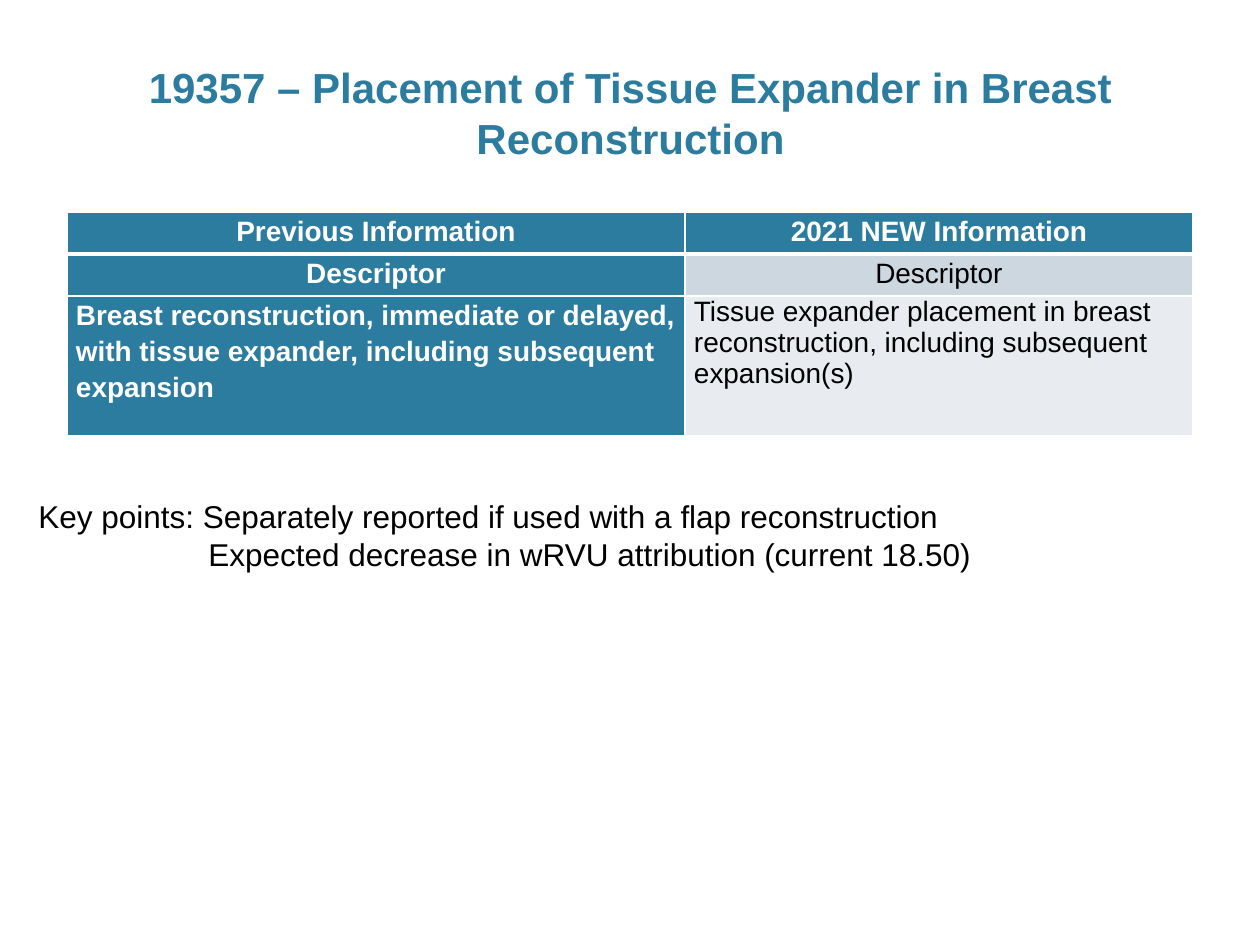
from lxml import etree
from pptx import Presentation
from pptx.dml.color import RGBColor
from pptx.enum.text import MSO_ANCHOR, PP_ALIGN
from pptx.oxml.ns import qn
from pptx.util import Pt

PX = 914400 / 126  # EMU in one px
TEAL = RGBColor(0x2C, 0x7C, 0x9F)
MIST = RGBColor(0xCD, 0xD7, 0xDF)
PALE = RGBColor(0xE8, 0xEC, 0xF0)
WHITE = RGBColor(0xFF, 0xFF, 0xFF)
BLACK = RGBColor(0x00, 0x00, 0x00)
LEFT, CENTER = PP_ALIGN.LEFT, PP_ALIGN.CENTER
TOP, BOTTOM = MSO_ANCHOR.TOP, MSO_ANCHOR.BOTTOM


def px(n):
    return round(n * PX)


class Deck:
    font = "Arial"

    def __init__(self, width, height):
        self.prs = Presentation()
        self.prs.slide_width, self.prs.slide_height = px(width), px(height)
        self.s = self.prs.slides.add_slide(self.prs.slide_layouts[6])

    def add_line(self, p, text, size, color, bold=False, **layout):
        for name, value in layout.items():
            setattr(p, name, value)
        r = p.add_run()
        r.text = text
        style = {"name": self.font, "size": Pt(size), "bold": bold}
        for name, value in style.items():
            setattr(r.font, name, value)
        r.font.color.rgb = color

    def text(self, box, lines, size, color, bold=False, align=LEFT, anchor=TOP):
        """Each line is a pair of its text and its left indent."""
        tf = self.s.shapes.add_textbox(*map(px, box)).text_frame
        tf.word_wrap = True
        tf.vertical_anchor = anchor
        for i, (line, indent) in enumerate(lines):
            p = tf.add_paragraph() if i else tf.paragraphs[0]
            if indent:
                p._p.get_or_add_pPr().set("marL", str(px(indent)))
            self.add_line(p, line, size, color, bold, alignment=align)

    def borders(self, cell, **widths):
        tcPr = cell._tc.get_or_add_tcPr()
        for side in "LRTB":
            width = Pt(widths.get(side, 1))
            ln = etree.SubElement(tcPr, qn(f"a:ln{side}"), w=str(int(width)))
            fill = etree.SubElement(ln, qn("a:solidFill"))
            etree.SubElement(fill, qn("a:srgbClr"), val=str(WHITE))

    def table(self, left, top, widths, heights, rows, fills, size):
        box = (left, top, sum(widths), sum(heights))
        frame = self.s.shapes.add_table(len(rows), len(widths), *map(px, box))
        table = frame.table
        for column, width in zip(table.columns, widths):
            column.width = px(width)
        margins = {"margin_left": px(9), "margin_right": px(9),
                   "margin_top": 0, "margin_bottom": 0}
        # A thick rule parts the header from the body
        thick = {0: {"B": 3}, 1: {"T": 3}}
        for i, (row, height) in enumerate(zip(rows, heights)):
            table.rows[i].height = px(height)
            last = i == len(rows) - 1
            for j, text in enumerate(row):
                cell = table.cell(i, j)
                for name, value in margins.items():
                    setattr(cell, name, value)
                self.borders(cell, **thick.get(i, {}))
                cell.fill.solid()
                cell.fill.fore_color.rgb = fills[i][j]
                strong = fills[i][j] == TEAL
                self.add_line(cell.text_frame.paragraphs[0], text, size,
                              WHITE if strong else BLACK, strong,
                              alignment=LEFT if last else CENTER,
                              line_spacing=1.15 if strong or not last else 1.0)


def main():
    deck = Deck(1260, 945)

    # Key points
    deck.text((26, 491, 1234, 89), [
        ("Key points: Separately reported if used with a flap reconstruction", 0),
        ("Expected decrease in wRVU attribution (current 18.50)", 170),
    ], 18, BLACK)

    # Title
    deck.text((76, 42, 1109, 127), [
        ("19357 – Placement of Tissue Expander in Breast Reconstruction", 0),
    ], 24, TEAL, bold=True, align=CENTER, anchor=BOTTOM)

    # Comparison table
    deck.table(67, 212, (618, 508), (42, 42, 140), [
        ("Previous Information", "2021 NEW Information"),
        ("Descriptor", "Descriptor"),
        ("Breast reconstruction, immediate or delayed, with tissue expander, "
         "including subsequent expansion",
         "Tissue expander placement in breast reconstruction, "
         "including subsequent expansion(s)"),
    ], [(TEAL, TEAL), (TEAL, MIST), (TEAL, PALE)], 16)

    deck.prs.save("out.pptx")


if __name__ == "__main__":
    main()
